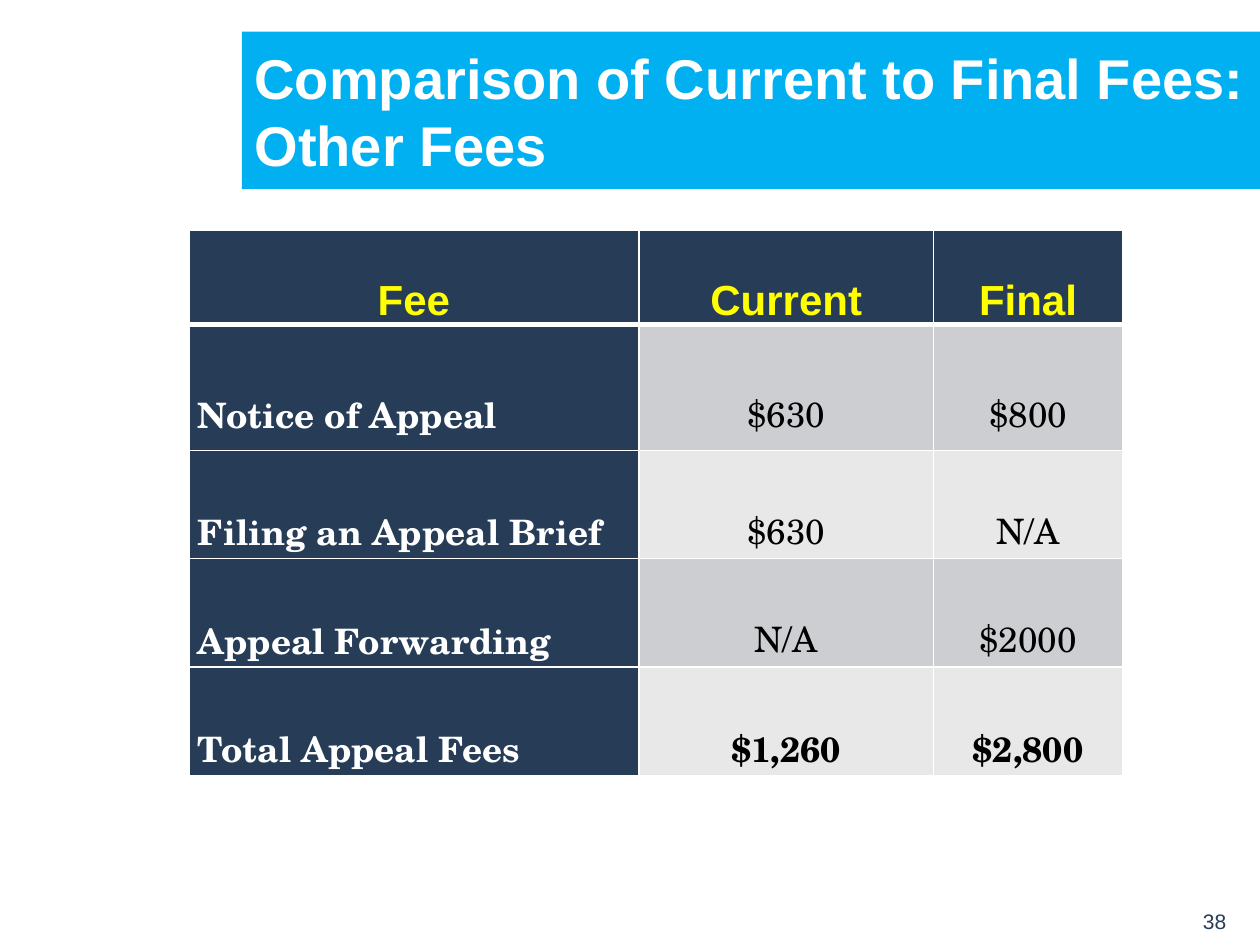
import pptx
import pptx.util
from lxml import etree
from pptx.dml.color import RGBColor
from pptx.enum.text import MSO_ANCHOR, PP_ALIGN
from pptx.oxml.ns import qn
from pptx.util import Inches, Pt

# Content
TITLE = "Comparison of Current to Final Fees: Other Fees"
PAGE_NUMBER = "38"
FEES = [
    ("Fee", "Current", "Final"),
    ("Notice of Appeal", "$630", "$800"),
    ("Filing an Appeal Brief", "$630", "N/A"),
    ("Appeal Forwarding", "N/A", "$2000"),
    ("Total Appeal Fees", "$1,260", "$2,800"),
]
COLUMN_WIDTHS = [3.57, 2.34, 1.5]
ROW_HEIGHTS = [0.67, 1, 0.64, 0.64, 0.64]

# Look
WHITE, BLACK, YELLOW = "FFFFFF", "000000", "FFFF00"
NAVY, SKY = "273C56", "00B0F0"
BANDS = ["CDCED1", "E8E8E9"]
SANS, SERIF = "Arial", "TeX Gyre Schola"


def paint(fill, color):
    fill.solid()
    fill.fore_color.rgb = RGBColor.from_string(color)


def style(paragraph, font_name, size, color, bold, align):
    paragraph.alignment = align
    font = paragraph.runs[0].font
    font.name, font.size, font.bold = font_name, Pt(size), bold
    font.color.rgb = RGBColor.from_string(color)


def set_borders(cell, widths):
    """Draw white borders; must come before the cell's fill."""
    properties = cell._tc.get_or_add_tcPr()
    for side, width in widths.items():
        line = etree.SubElement(properties, qn(f"a:ln{side}"), w=str(Pt(width)))
        solid = etree.SubElement(line, qn("a:solidFill"))
        etree.SubElement(solid, qn("a:srgbClr"), val=WHITE)


def format_cell(cell, text, row, column):
    is_header, is_label = row == 0, column == 0
    is_total = row == len(FEES) - 1
    cell.text = text
    cell.margin_left = cell.margin_right = Inches(0.07)
    cell.margin_top = cell.margin_bottom = 0
    cell.vertical_anchor = MSO_ANCHOR.BOTTOM if is_header else MSO_ANCHOR.MIDDLE

    paragraph = cell.text_frame.paragraphs[0]
    paragraph.line_spacing = 2.0
    paragraph.space_before = paragraph.space_after = Pt(3)
    if is_header:
        style(paragraph, SANS, 24, YELLOW, True, PP_ALIGN.CENTER)
    elif is_label:
        style(paragraph, SERIF, 20, WHITE, True, PP_ALIGN.LEFT)
    else:
        style(paragraph, SERIF, 20, BLACK, is_total, PP_ALIGN.CENTER)

    set_borders(cell, {"L": 1, "R": 1, "T": 3 if row == 1 else 1,
                       "B": 3 if is_header else 1})
    paint(cell.fill, NAVY if is_header or is_label else BANDS[(row - 1) % 2])


presentation = pptx.Presentation()
presentation.slide_width, presentation.slide_height = Inches(10), Inches(7.5)
slide = presentation.slides.add_slide(presentation.slide_layouts[5])

# Title band
title = slide.shapes.title
title.left, title.top = Inches(1.92), Inches(0.25)
title.width, title.height = Inches(8.08), Inches(1.25)
paint(title.fill, SKY)
title.text_frame.text = TITLE
title.text_frame.vertical_anchor = MSO_ANCHOR.MIDDLE
style(title.text_frame.paragraphs[0], SANS, 32, WHITE, True, PP_ALIGN.LEFT)

# Fee table
fee_table = slide.shapes.add_table(
    len(FEES), len(COLUMN_WIDTHS), Inches(1.5), Inches(1.83),
    Inches(sum(COLUMN_WIDTHS)), Inches(sum(ROW_HEIGHTS))).table
for column, width in zip(fee_table.columns, COLUMN_WIDTHS):
    column.width = Inches(width)
for row, height in zip(fee_table.rows, ROW_HEIGHTS):
    row.height = Inches(height)
for r, fee in enumerate(FEES):
    for c, text in enumerate(fee):
        format_cell(fee_table.cell(r, c), text, r, c)

# Page number
page_number = slide.shapes.add_textbox(
    Inches(7.75), Inches(6.92), Inches(2.08), Inches(0.5)).text_frame
page_number.word_wrap = True
page_number.vertical_anchor = MSO_ANCHOR.BOTTOM
page_number.margin_bottom = Inches(0.01)
page_number.text = PAGE_NUMBER
style(page_number.paragraphs[0], SANS, 12, NAVY, False, PP_ALIGN.RIGHT)

presentation.save("out.pptx")
